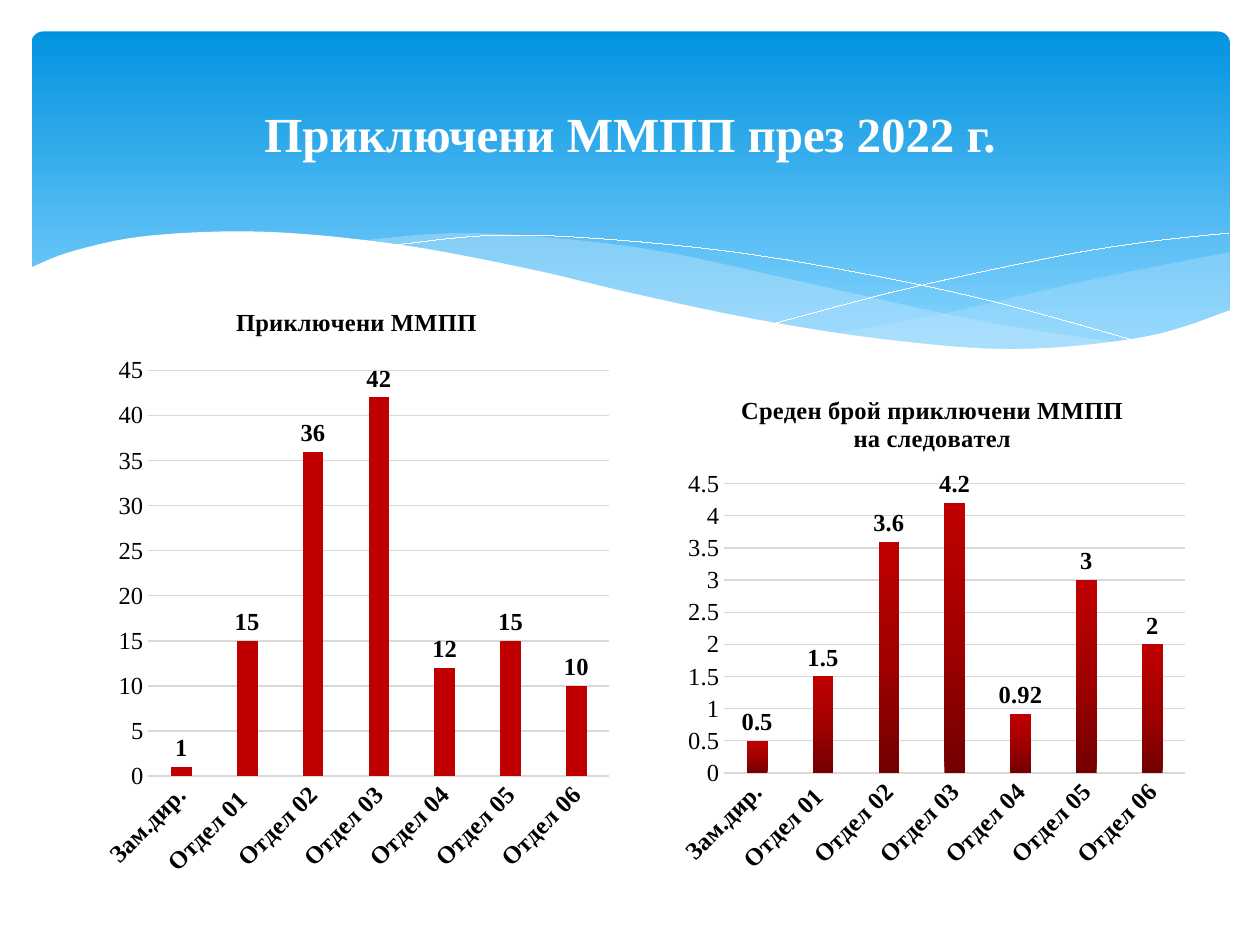
from copy import deepcopy

from lxml import etree
from pptx import Presentation
from pptx.chart.data import CategoryChartData
from pptx.dml.color import RGBColor
from pptx.enum.chart import XL_CHART_TYPE, XL_LABEL_POSITION, XL_TICK_MARK
from pptx.enum.shapes import MSO_SHAPE
from pptx.enum.text import MSO_ANCHOR, PP_ALIGN
from pptx.oxml.ns import qn
from pptx.util import Inches, Pt

COLUMN = XL_CHART_TYPE.COLUMN_CLUSTERED
OUTSIDE = XL_LABEL_POSITION.OUTSIDE_END
NO_TICK = XL_TICK_MARK.NONE
ROUND = MSO_SHAPE.ROUNDED_RECTANGLE
MIDDLE = MSO_ANCHOR.MIDDLE
CENTER = PP_ALIGN.CENTER

WHITE = RGBColor(0xFF, 0xFF, 0xFF)
BLACK = RGBColor(0, 0, 0)
BLUE = RGBColor(0x02, 0x93, 0xE0)
SKY = RGBColor(0x83, 0xD3, 0xFE)
PALE = RGBColor(0xC6, 0xE7, 0xFC)
GRAY = RGBColor(0xD9, 0xD9, 0xD9)
RED = RGBColor(0xC0, 0, 0)
MID = RGBColor(0xA2, 0, 0)
DARK = RGBColor(0x72, 0, 0)
FONT = "Times New Roman"
STEPS = 8


def curve(*knots):
    """Return points on a smooth Catmull-Rom curve through the knots."""
    ends = [knots[0], *knots, knots[-1]]
    points = [knots[0]]
    for quad in zip(ends, ends[1:], ends[2:], ends[3:]):
        for step in range(1, STEPS + 1):
            t = step / STEPS
            points.append(tuple(
                b + t * (c - a) / 2
                + t**2 * (2 * a - 5 * b + 4 * c - d) / 2
                + t**3 * (3 * b - a - 3 * c + d) / 2
                for a, b, c, d in zip(*quad)
            ))
    return points


def shade(owner, fill, angle, stops):
    """Give the fill, the first gradient in owner, these (place, color) stops."""
    fill.gradient()
    fill.gradient_angle = angle
    first = next(owner.iter(qn("a:gs")))
    for extra in stops[2:]:
        first.addnext(deepcopy(first))
    for stop, (place, color) in zip(fill.gradient_stops, stops):
        stop.position = place
        stop.color.rgb = color


prs = Presentation()
prs.slide_width, prs.slide_height = Inches(10), Inches(7.5)
slide = prs.slides.add_slide(prs.slide_layouts[5])
shapes = slide.shapes

banner = shapes.add_shape(ROUND, Inches(0.25), Inches(0.25), Inches(9.51), Inches(2.7))
banner.adjustments[0] = 0.034
banner.shadow.inherit = False
banner.line.fill.background()
shade(banner.element, banner.fill, 270, [(0, BLUE), (0.9, SKY)])

right = curve((9.76, 2), (8.61, 2.23), (7.53, 2.48), (6.61, 2.65)) + curve(
    (6.61, 2.65), (7.32, 2.74), (8.03, 2.78), (8.72, 2.74), (9.28, 2.63), (9.76, 2.47))
left = curve(
    (8.93, 2.73), (7.75, 2.54), (6.29, 2.22), (5.28, 2), (4.42, 1.89), (3.61, 1.85), (2.86, 1.91)
) + curve(
    (2.86, 1.91), (3.62, 2.03), (4.49, 2.22), (5.66, 2.48), (6.65, 2.66), (7.48, 2.76),
    (8.18, 2.78), (8.93, 2.73))
fall = curve(
    (3.09, 1.95), (3.87, 1.87), (4.69, 1.89), (5.82, 2), (6.95, 2.19), (7.95, 2.41), (9.07, 2.72))
rise = curve((6.13, 2.57), (7.2, 2.29), (8.36, 2.04), (9.1, 1.92), (9.75, 1.85))
front = curve(
    (9.77, 2.46), (9.1, 2.67), (8.09, 2.77), (7.08, 2.7), (6.03, 2.54), (5.03, 2.33),
    (4.18, 2.13), (3.16, 1.94), (2.11, 1.84), (1.19, 1.87), (0.59, 1.99), (0.23, 2.13)
) + [(0.23, 3.29), (9.77, 3.29)]

for points, color, alpha in [(right, PALE, 29), (left, PALE, 40), (fall, None, 0),
                             (rise, None, 0), (front, WHITE, 100)]:
    dots = [(Inches(x), Inches(y)) for x, y in points]
    pen = shapes.build_freeform(*dots[0])
    pen.add_line_segments(dots[1:], close=color is not None)
    wave = pen.convert_to_shape()
    wave.shadow.inherit = False
    if color is None:
        wave.fill.background()
        wave.line.color.rgb = WHITE
        wave.line.width = Pt(0.01)
        continue
    wave.line.fill.background()
    wave.fill.solid()
    wave.fill.fore_color.rgb = color
    if alpha < 100:
        tint = wave.element.spPr.find(qn("a:solidFill"))[0]
        etree.SubElement(tint, qn("a:alpha")).set("val", str(alpha * 1000))

title = shapes.title
title.left, title.top = Inches(0.5), Inches(0.37)
title.width, title.height = Inches(9), Inches(1.37)
frame = title.text_frame
frame.text = "Приключени ММПП през 2022 г."
frame.vertical_anchor = MIDDLE
frame.paragraphs[0].alignment = CENTER
font = frame.paragraphs[0].runs[0].font
font.name, font.size, font.bold = FONT, Pt(28), True
font.color.rgb = WHITE
title.element.getparent().append(title.element)

cats = ["Зам.дир.", "Отдел 01 ", "Отдел 02", "Отдел 03", "Отдел 04", "Отдел 05", "Отдел 06"]
totals = (1, 15, 36, 42, 12, 15, 10)
means = (0.5, 1.5, 3.6, 4.2, 0.92, 3, 2)
for head, vals, x, y, height, unit, shaded in [
    ("Приключени ММПП", totals, 0.74, 2.25, 4.8, 5, False),
    ("Среден брой приключени ММПП на следовател", means, 5.31, 2.96, 4.05, 0.5, True),
]:
    data = CategoryChartData()
    data.categories = cats
    data.add_series("Series 1", vals)
    chart = shapes.add_chart(
        COLUMN, Inches(x), Inches(y), Inches(4.18), Inches(height), data
    ).chart
    chart.has_legend = False
    chart.font.name, chart.font.size = FONT, Pt(12)
    chart.font.color.rgb = BLACK

    chart.has_title = True
    chart.chart_title.include_in_layout = False
    frame = chart.chart_title.text_frame
    frame.text = head
    font = frame.paragraphs[0].runs[0].font
    font.name, font.size, font.bold = FONT, Pt(14), True
    font.color.rgb = BLACK

    base, scale = chart.category_axis, chart.value_axis
    for axis in (base, scale):
        axis.major_tick_mark = axis.minor_tick_mark = NO_TICK
        axis.tick_labels.font.size = Pt(14)
    base.tick_labels.font.bold = True
    scale.minimum_scale, scale.maximum_scale, scale.major_unit = 0, unit * 9, unit
    scale.format.line.fill.background()
    for line in (base.format.line, scale.major_gridlines.format.line):
        line.color.rgb = GRAY
        line.width = Pt(0.75)

    plot = chart.plots[0]
    plot.vary_by_categories = False
    plot.gap_width, plot.overlap = 219, -27
    bars = plot.series[0]
    fill = bars.format.fill
    if shaded:
        shade(chart.element, fill, 90, [(0, DARK), (0.5, MID), (1, RED)])
    else:
        fill.solid()
        fill.fore_color.rgb = RED
    labels = bars.data_labels
    labels.show_value = True
    labels.position = OUTSIDE
    labels.font.size, labels.font.bold = Pt(14), True

prs.save("out.pptx")
